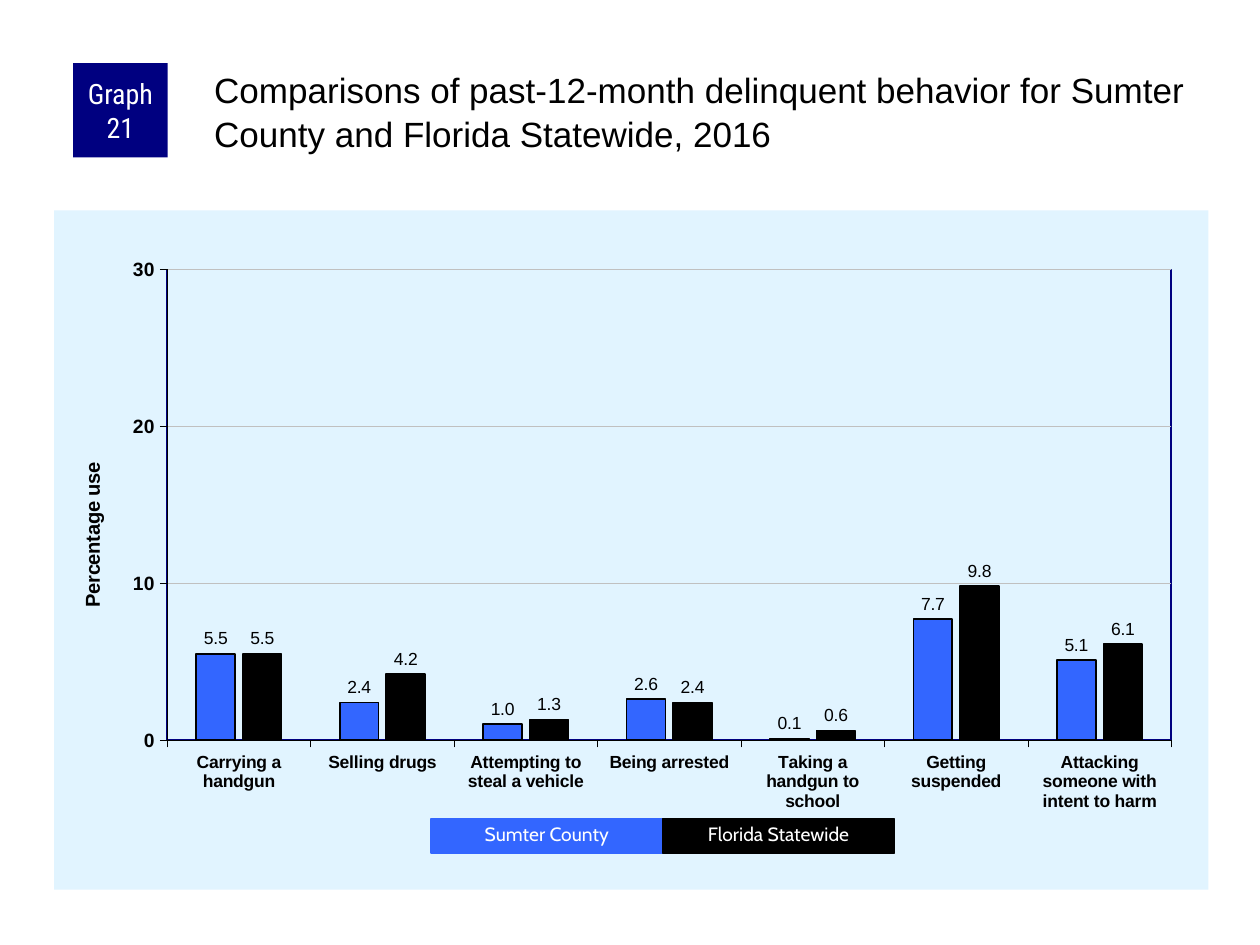
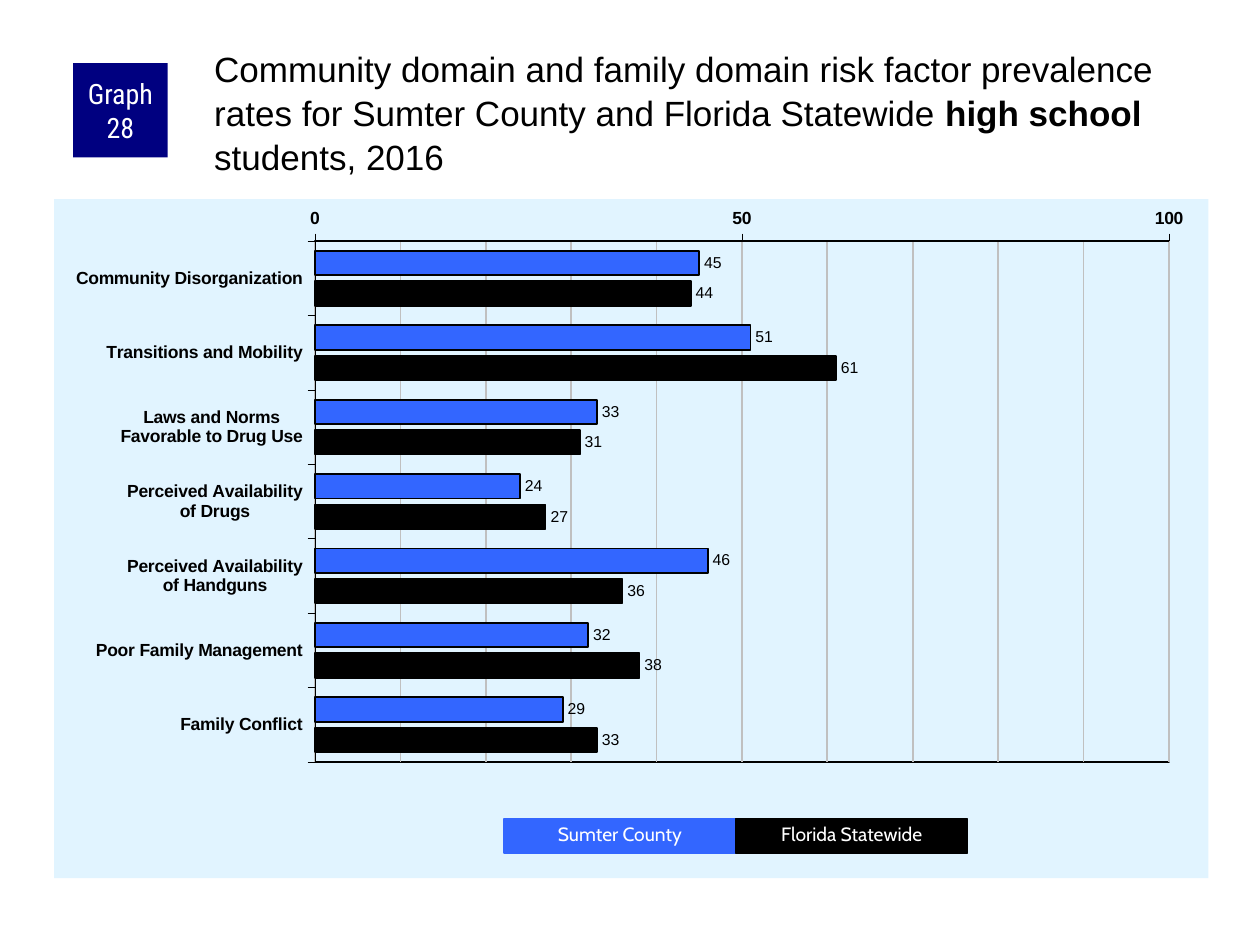
import dataclasses

import pptx
import pptx.chart.data
import pptx.dml.color
import pptx.enum.chart
import pptx.enum.shapes
import pptx.enum.text
import pptx.oxml
import pptx.oxml.ns
import pptx.util

Inches = pptx.util.Inches
Pt = pptx.util.Pt
Enum = pptx.enum.chart
Align = pptx.enum.text.PP_ALIGN
Anchor = pptx.enum.text.MSO_ANCHOR
Fit = pptx.enum.text.MSO_AUTO_SIZE


@dataclasses.dataclass(frozen=True)
class Theme:
    navy: str = "000080"
    blue: str = "3366FF"
    black: str = "000000"
    white: str = "FFFFFF"
    pale: str = "E1F4FF"
    gray: str = "C0C0C0"
    font: str = "Arial"
    badge_font: str = "Roboto Condensed"
    key_font: str = "Cabin"
    title: float = 20
    badge: float = 16
    key: float = 11
    axis: float = 10


THEME = Theme()
GROUPS = [("Sumter County", THEME.blue), ("Florida Statewide", THEME.black)]


def color(code):
    return pptx.dml.color.RGBColor.from_string(code)


def style(font, size, bold=False, name=THEME.font, tint=THEME.black):
    font.name, font.size, font.bold = name, Pt(size), bold
    font.color.rgb = color(tint)


def stroke(line, tint, width):
    line.color.rgb = color(tint)
    line.width = Pt(width)


def write(frame, runs, size, name=THEME.font, tint=THEME.black,
          align=Align.LEFT, anchor=Anchor.TOP, inset=None, space=None,
          fit=Fit.NONE):
    """Fill a text frame with (text, bold) runs."""
    frame.word_wrap = True
    frame.auto_size = fit
    frame.vertical_anchor = anchor
    if inset:
        (frame.margin_left, frame.margin_top,
         frame.margin_right, frame.margin_bottom) = map(Inches, inset)
    para = frame.paragraphs[0]
    para.alignment = align
    if space:
        para.line_spacing = space
    for text, bold in runs:
        run = para.add_run()
        run.text = text
        style(run.font, size, bold, name, tint)


def add_rect(slide, box, fill):
    rect = slide.shapes.add_shape(
        pptx.enum.shapes.MSO_SHAPE.RECTANGLE, *map(Inches, box))
    rect.shadow.inherit = False
    rect.fill.solid()
    rect.fill.fore_color.rgb = color(fill)
    return rect


def add_head(slide, number, runs, top):
    # Square badge with the graph number
    badge = add_rect(slide, (0.58, 0.5, 0.75, 0.75), THEME.navy)
    badge.line.fill.background()
    write(badge.text_frame, [(f"Graph {number}", False)], THEME.badge,
          name=THEME.badge_font, tint=THEME.white, align=Align.CENTER,
          anchor=Anchor.MIDDLE, inset=(0.05, 0, 0.05, 0))
    # Title
    title = slide.shapes.title
    title.left, title.top, title.width, title.height = map(
        Inches, (1.67, top, 7.92, 0.83))
    write(title.text_frame, runs, THEME.title,
          inset=(0.03, 0.03, 0, 0), space=1.05)


def add_key(slide, left, top=6.5, width=1.84, height=0.27):
    for i, (name, tint) in enumerate(GROUPS):
        rect = add_rect(slide, (left + i * width, top, width, height), tint)
        stroke(rect.line, tint, 0.75)
        write(rect.text_frame, [(name, False)], THEME.key,
              name=THEME.key_font, tint=THEME.white, align=Align.CENTER,
              space=0.9, fit=Fit.SHAPE_TO_FIT_TEXT)


def make_xml(tag, body):
    spaces = pptx.oxml.ns.nsdecls("c", "a")
    return pptx.oxml.parse_xml(f"<c:{tag} {spaces}>{body}</c:{tag}>")


def fill_xml(tint):
    return f'<a:solidFill><a:srgbClr val="{tint}"/></a:solidFill>'


def line_xml(tint, width):
    return f'<a:ln w="{Pt(width)}">{fill_xml(tint)}</a:ln>'


def set_area(chart, plot, edge):
    """Place the inner plot area, frame it and fill the chart area."""
    find = pptx.oxml.ns.qn
    whole = chart.element.find(find("c:chart"))
    area = whole.find(find("c:plotArea"))
    for old in area.findall(find("c:layout")):
        area.remove(old)
    parts = '<c:layoutTarget val="inner"/>'
    parts += "".join(f'<c:{k}Mode val="edge"/>' for k in "xy")
    parts += "".join(f'<c:{k} val="{v}"/>' for k, v in zip("xywh", plot))
    area.insert(0, make_xml(
        "layout", f"<c:manualLayout>{parts}</c:manualLayout>"))
    area.append(make_xml("spPr", "<a:noFill/>" + line_xml(edge, 1)))
    whole.addnext(make_xml(
        "spPr", fill_xml(THEME.pale) + "<a:ln><a:noFill/></a:ln>"))


def set_axis(axis, size):
    axis.major_tick_mark = Enum.XL_TICK_MARK.OUTSIDE
    axis.minor_tick_mark = Enum.XL_TICK_MARK.NONE
    stroke(axis.format.line, THEME.black, 0.25)
    style(axis.tick_labels.font, size, True)


def add_chart(slide, kind, box, cats, rows, plot, edge, gap, lap, top, step,
              grid, form, label, size):
    data = pptx.chart.data.CategoryChartData()
    data.categories = cats
    for (name, _), row in zip(GROUPS, rows):
        data.add_series(name, row)
    chart = slide.shapes.add_chart(kind, *map(Inches, box), data).chart
    style(chart.font, THEME.axis)
    chart.has_legend = chart.has_title = False
    set_area(chart, plot, edge)
    # Bars and their labels
    bars = chart.plots[0]
    bars.gap_width, bars.overlap = gap, lap
    bars.vary_by_categories = False
    for series, (_, tint) in zip(bars.series, GROUPS):
        series.invert_if_negative = False
        series.format.fill.solid()
        series.format.fill.fore_color.rgb = color(tint)
        stroke(series.format.line, THEME.black, 1)
        labels = series.data_labels
        labels.show_value = True
        labels.number_format = form
        labels.number_format_is_linked = False
        labels.position = Enum.XL_LABEL_POSITION.OUTSIDE_END
        style(labels.font, label)
    # Axes
    set_axis(chart.category_axis, THEME.axis)
    value = chart.value_axis
    set_axis(value, size)
    value.minimum_scale, value.maximum_scale = 0, top
    value.major_unit = step
    value.tick_labels.number_format = "0"
    value.tick_labels.number_format_is_linked = False
    value.has_major_gridlines = True
    stroke(value.major_gridlines.format.line, THEME.gray, grid)
    return chart


def add_columns(slide, box):
    cats = ["Carrying a handgun", "Selling drugs",
            "Attempting to steal a vehicle", "Being arrested",
            "Taking a handgun to school", "Getting suspended",
            "Attacking someone with intent to harm"]
    rows = [(5.5, 2.4, 1.0, 2.6, 0.1, 7.7, 5.1),
            (5.5, 4.2, 1.3, 2.4, 0.6, 9.8, 6.1)]
    chart = add_chart(
        slide, Enum.XL_CHART_TYPE.COLUMN_CLUSTERED, box, cats, rows,
        plot=(0.098, 0.087, 0.87, 0.693), edge=THEME.navy, gap=150, lap=-20,
        top=30, step=10, grid=0.25, form="0.0", label=10, size=11)
    frame = chart.value_axis.axis_title.text_frame
    frame.text = "Percentage use"
    style(frame.paragraphs[0].runs[0].font, 11.5, True)


def add_bars(slide, box):
    cats = ["Community Disorganization", "Transitions and Mobility",
            "Laws and Norms\nFavorable to Drug Use",
            "Perceived Availability\nof Drugs",
            "Perceived Availability\nof Handguns",
            "Poor Family Management", "Family Conflict"]
    rows = [(45, 51, 33, 24, 46, 32, 29), (44, 61, 31, 27, 36, 38, 33)]
    chart = add_chart(
        slide, Enum.XL_CHART_TYPE.BAR_CLUSTERED, box, cats, rows,
        plot=(0.226, 0.062, 0.74, 0.767), edge=THEME.black, gap=80, lap=-25,
        top=100, step=50, grid=1, form="0", label=9, size=THEME.axis)
    # First category on top, value axis at the bottom
    chart.category_axis.reverse_order = True
    chart.category_axis.crosses = Enum.XL_AXIS_CROSSES.MAXIMUM
    # Minor gridlines
    value = chart.value_axis
    value.minor_unit = 10
    value.has_minor_gridlines = True
    for lines in chart.element.iter(pptx.oxml.ns.qn("c:minorGridlines")):
        lines.append(make_xml("spPr", line_xml(THEME.gray, 1)))


def add_page(deck, draw, top, number, runs, head, key):
    slide = deck.slides.add_slide(deck.slide_layouts[5])
    draw(slide, (0.43, top, 9.16, 5.39))
    add_head(slide, number, runs, head)
    add_key(slide, key)


def main():
    deck = pptx.Presentation()
    deck.slide_width, deck.slide_height = Inches(10), Inches(7.5)
    add_page(deck, add_columns, 1.67, 21, [
        ("Comparisons of past-12-month delinquent behavior for Sumter "
         "County and Florida Statewide, 2016", False)], head=0.5, key=3.42)
    add_page(deck, add_bars, 1.58, 28, [
        ("Community domain and family domain risk factor prevalence rates "
         "for Sumter County and Florida Statewide ", False),
        ("high school", True), (" students, 2016", False)],
        head=0.33, key=4)
    deck.save("out.pptx")


if __name__ == "__main__":
    main()
